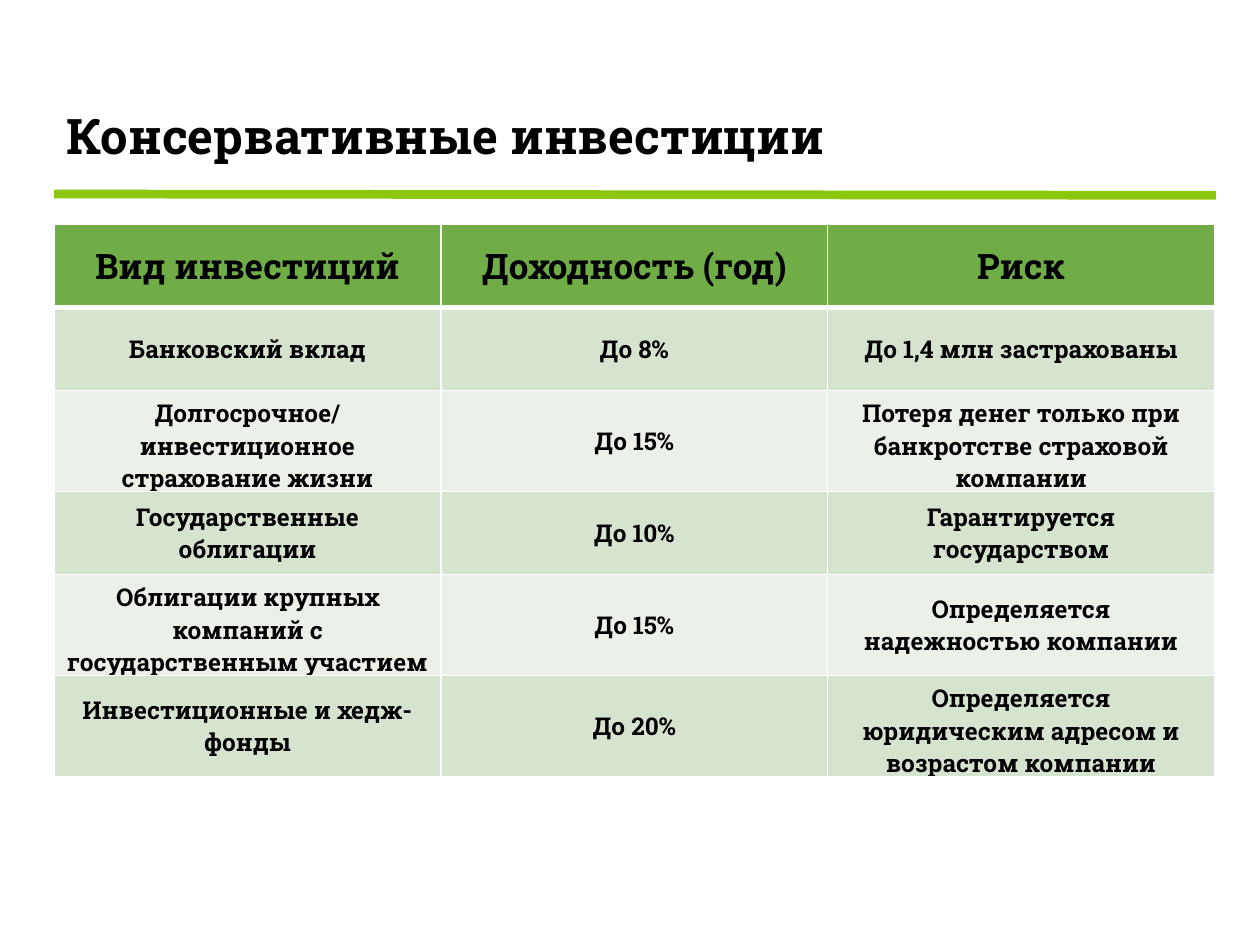
from lxml import etree
from pptx import Presentation
from pptx.dml.color import RGBColor
from pptx.enum import shapes, text
from pptx.oxml import ns
from pptx.util import Inches, Pt

BLACK = RGBColor(0x00, 0x00, 0x00)
WHITE = RGBColor(0xFF, 0xFF, 0xFF)
LIME = RGBColor(0x8C, 0xC7, 0x0E)
HEAD = RGBColor(0x70, 0xAD, 0x47)
BANDS = RGBColor(0xEB, 0xF1, 0xE9), RGBColor(0xD5, 0xE3, 0xCF)
FONT = {"name": "Roboto Slab", "bold": True}

ROWS = [
    ("Вид инвестиций", "Доходность (год)", "Риск"),
    ("Банковский вклад", "До 8%", "До 1,4 млн застрахованы"),
    ("Долгосрочное/\nинвестиционное страхование жизни", "До 15%",
     "Потеря денег только при банкротстве страховой компании"),
    ("Государственные облигации", "До 10%", "Гарантируется государством"),
    ("Облигации крупных компаний с государственным участием", "До 15%",
     "Определяется надежностью компании"),
    ("Инвестиционные и хедж-фонды", "До 20%",
     "Определяется юридическим адресом и возрастом компании"),
]


def write(frame, words, size, align):
    frame.text = words
    for para in frame.paragraphs:
        para.alignment = align
        for run in para.runs:
            for key, val in {**FONT, "size": Pt(size)}.items():
                setattr(run.font, key, val)
            run.font.color.rgb = BLACK


def add_title(slide, words):
    box = slide.shapes.add_textbox(
        Inches(0.43), Inches(0.79), Inches(8.27), Inches(0.57))
    box.text_frame.word_wrap = True
    write(box.text_frame, words, 28, text.PP_ALIGN.LEFT)


def add_rule(slide):
    rule = slide.shapes.add_connector(
        shapes.MSO_CONNECTOR.STRAIGHT,
        Inches(0.43), Inches(1.54), Inches(9.65), Inches(1.55))
    rule.line.color.rgb = LIME
    rule.line.width = Pt(5)
    etree.SubElement(rule._element.spPr, ns.qn("a:effectLst"))


def add_edges(cell, widths):
    props = cell._tc.get_or_add_tcPr()
    for side, width in widths.items():
        edge = etree.SubElement(props, ns.qn("a:ln" + side), w=str(Pt(width)))
        fill = etree.SubElement(edge, ns.qn("a:solidFill"))
        etree.SubElement(fill, ns.qn("a:srgbClr"), val=str(WHITE))


def fill_cell(cell, words, row):
    cell.vertical_anchor = text.MSO_ANCHOR.MIDDLE
    add_edges(cell, {"L": 1, "R": 1, "T": 3 if row == 1 else 1,
                     "B": 3 if row == 0 else 1})
    cell.fill.solid()
    cell.fill.fore_color.rgb = BANDS[row % 2] if row else HEAD
    write(cell.text_frame, words, 14 if row else 20, text.PP_ALIGN.CENTER)


def add_grid(slide, rows):
    grid = slide.shapes.add_table(
        len(rows), len(rows[0]), Inches(0.43), Inches(1.78),
        Inches(9.21), Inches(0.66 * len(rows))).table
    for row, line in enumerate(rows):
        for col, words in enumerate(line):
            fill_cell(grid.cell(row, col), words, row)


def main():
    deck = Presentation()
    deck.slide_width, deck.slide_height = Inches(10), Inches(7.5)
    slide = deck.slides.add_slide(deck.slide_layouts[6])
    add_title(slide, "Консервативные инвестиции")
    add_rule(slide)
    add_grid(slide, ROWS)
    deck.save("out.pptx")


if __name__ == "__main__":
    main()
